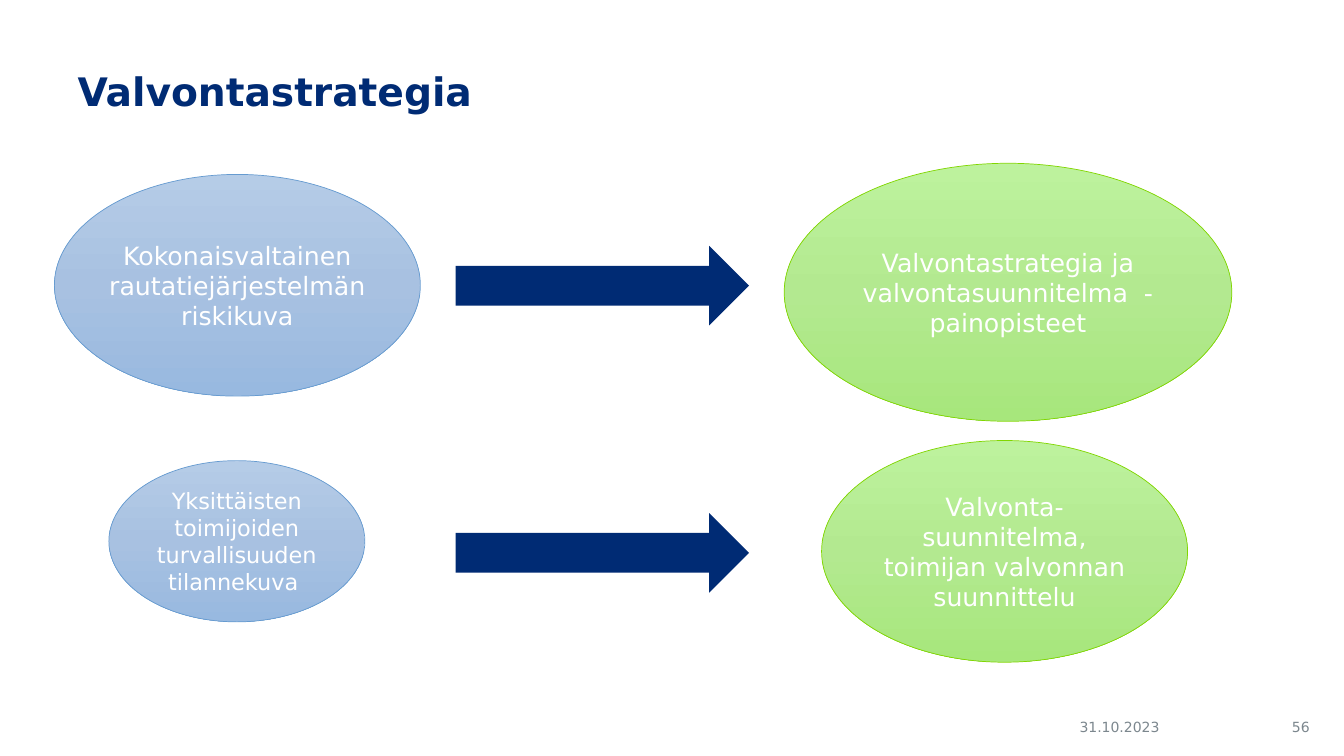
"""Build the Valvontastrategia slide with python-pptx."""
from copy import deepcopy

from pptx import Presentation
from pptx.dml.color import RGBColor
from pptx.enum.shapes import MSO_SHAPE
from pptx.enum.text import MSO_ANCHOR, PP_ALIGN
from pptx.oxml.ns import qn
from pptx.util import Inches, Pt

WIDTH, HEIGHT = Inches(13.33), Inches(7.5)
FONT = "DejaVu Sans"
NAVY = RGBColor(0x00, 0x2B, 0x74)
GREY = RGBColor(0x7C, 0x87, 0x8E)
WHITE = RGBColor(0xFF, 0xFF, 0xFF)
BLUE_LINE = RGBColor(0x66, 0x9B, 0xD0)
BLUE_STOPS = (RGBColor(0xB5, 0xCC, 0xE7), RGBColor(0xA8, 0xC1, 0xE1), RGBColor(0x98, 0xB9, 0xE0))
GREEN_LINE = RGBColor(0x81, 0xD6, 0x00)
GREEN_STOPS = (RGBColor(0xBD, 0xF2, 0x9D), RGBColor(0xB3, 0xE9, 0x90), RGBColor(0xA7, 0xE7, 0x7C))
BLUE = (BLUE_STOPS, BLUE_LINE)
GREEN = (GREEN_STOPS, GREEN_LINE)

LARGE = (27.23, 29.33)
ELLIPSES = (
    ((4.05, 23.07), LARGE, BLUE, 18, "Kokonaisvaltainen rautatiejärjestelmän riskikuva"),
    ((8.1, 60.93), (19.05, 21.33), BLUE, 16,
     "Yksittäisten toimijoiden turvallisuuden tilannekuva "),
    ((58.35, 21.6), (33.3, 34.13), GREEN, 18,
     "Valvontastrategia ja valvontasuunnitelma  - painopisteet"),
    ((61.13, 58.27), LARGE, GREEN, 18, "Valvonta-suunnitelma, toimijan valvonnan suunnittelu"),
)
ARROW_TOPS = (32.53, 67.87)


def box(pos, extent):
    """Turn percentages of the slide into left, top, width and height."""
    return [int(share * full / 100) for share, full in zip(pos + extent, (WIDTH, HEIGHT) * 2)]


def write(tf, text, size=18, color=WHITE, bold=False, align=PP_ALIGN.CENTER,
          anchor=MSO_ANCHOR.MIDDLE, spacing=None):
    """Fill a text frame with one formatted paragraph."""
    tf.word_wrap = True
    tf.vertical_anchor = anchor
    p = tf.paragraphs[0]
    p.alignment = align
    p.line_spacing = spacing
    r = p.add_run()
    r.text = text
    r.font.name, r.font.size, r.font.bold = FONT, Pt(size), bold
    r.font.color.rgb = color


def add_text(slide, pos, extent, text, **fmt):
    """Add a text box."""
    write(slide.shapes.add_textbox(*box(pos, extent)).text_frame, text, **fmt)


def fill_gradient(sp, colors):
    """Fill a shape with evenly spaced colours from top to bottom."""
    fill = sp.fill
    fill.gradient()
    fill.gradient_angle = 270
    stops = sp._element.spPr.find(".//" + qn("a:gsLst"))
    stops.insert(1, deepcopy(stops[0]))
    for i, (stop, color) in enumerate(zip(fill.gradient_stops, colors)):
        stop.position = i / (len(colors) - 1)
        stop.color.rgb = color


def add_ellipse(slide, pos, extent, style, font_size, text):
    """Add a labelled gradient ellipse."""
    stops, line = style
    sp = slide.shapes.add_shape(MSO_SHAPE.OVAL, *box(pos, extent))
    sp.shadow.inherit = False
    fill_gradient(sp, stops)
    sp.line.color.rgb = line
    sp.line.width = Pt(0.5)
    tf = sp.text_frame
    tf.margin_left = tf.margin_right = 0
    write(tf, text, size=font_size)


def add_arrow(slide, top):
    """Add a navy block arrow between the two columns."""
    sp = slide.shapes.add_shape(MSO_SHAPE.RIGHT_ARROW, *box((33.9, top), (21.83, 10.53)))
    sp.shadow.inherit = False
    sp.fill.solid()
    sp.fill.fore_color.rgb = NAVY
    sp.line.fill.background()


def main():
    """Build and save the slide."""
    prs = Presentation()
    prs.slide_width, prs.slide_height = WIDTH, HEIGHT
    slide = prs.slides.add_slide(prs.slide_layouts[6])
    add_text(slide, (5.03, 8.93), (88.13, 16.13), "Valvontastrategia", size=28, color=NAVY,
             bold=True, align=PP_ALIGN.LEFT, anchor=MSO_ANCHOR.TOP, spacing=0.9)
    add_text(slide, (75.6, 94.27), (15.38, 3.73), "31.10.2023", size=10, color=GREY)
    add_text(slide, (93.15, 94.27), (5.03, 3.73), "56", size=10, color=GREY,
             align=PP_ALIGN.RIGHT)
    for ellipse in ELLIPSES:
        add_ellipse(slide, *ellipse)
    for top in ARROW_TOPS:
        add_arrow(slide, top)
    prs.save("out.pptx")


if __name__ == "__main__":
    main()
